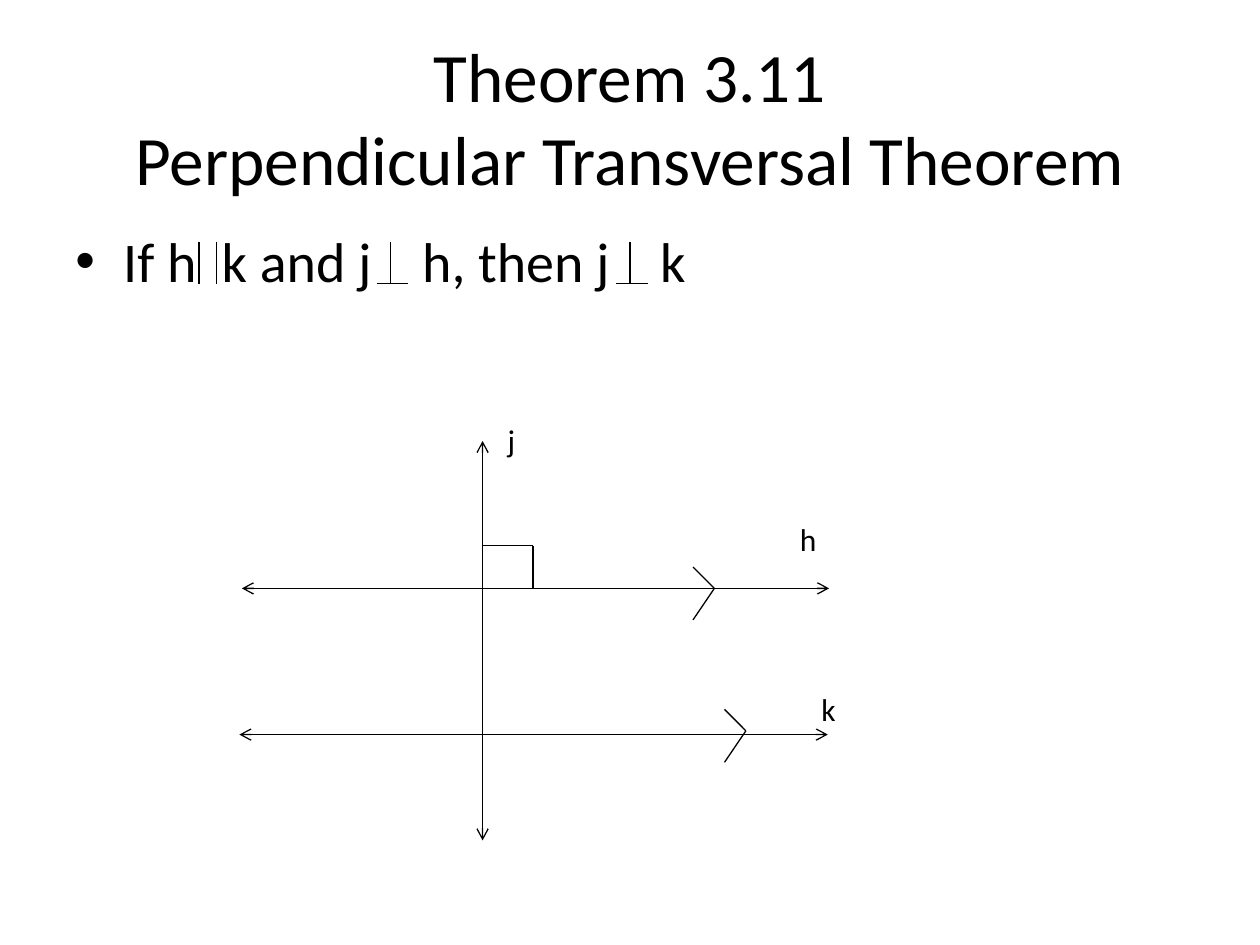
from lxml.etree import SubElement
from pptx import Presentation
from pptx.dml.color import RGBColor
from pptx.enum.shapes import MSO_CONNECTOR
from pptx.enum.text import MSO_ANCHOR, MSO_AUTO_SIZE, PP_ALIGN
from pptx.oxml.ns import qn
from pptx.util import Inches, Pt

COLORS = {"ink": "000000", "paper": "FFFFFF"}
FONT = "Calibri"
TITLE = "Theorem 3.11\vPerpendicular Transversal Theorem"
STATEMENT = "If h  k and j    h, then j    k"

SYMBOL_TOP, SYMBOL_BASE = 1.92, 2.25
PARALLEL_BARS = [1.58, 1.72]
PERPENDICULAR_STEMS = [3.1, 5]
J_X, H_Y, K_Y = 3.83, 4.67, 5.83
GEOMETRY_LINES = [
    (J_X, 3.5, J_X, 6.67),
    (1.92, H_Y, 6.58, H_Y),
    (1.9, K_Y, 6.57, K_Y),
]
RIGHT_ANGLE = [(J_X, 4.33), (4.23, 4.33), (4.23, H_Y)]
PARALLEL_MARK_TIPS = [(5.67, H_Y), (5.92, 5.8)]
LINE_LABELS = [("h", 6.25, 4.08), ("j", 3.93, 3.29), ("k", 6.42, 5.43)]


def style_text(frame, size):
    for para in frame.paragraphs:
        for span in para.runs:
            span.font.name = FONT
            span.font.size = Pt(size)
            span.font.color.rgb = RGBColor.from_string(COLORS["ink"])


def add_text(page, text, left, top, width, height, size):
    box = page.shapes.add_textbox(*map(Inches, (left, top, width, height)))
    frame = box.text_frame
    frame.word_wrap = True
    frame.text = text
    style_text(frame, size)
    return frame


def add_line(page, x1, y1, x2, y2, arrows=False):
    line = page.shapes.add_connector(
        MSO_CONNECTOR.STRAIGHT, *map(Inches, (x1, y1, x2, y2)))
    line.line.color.rgb = RGBColor.from_string(COLORS["ink"])
    line.line.width = Pt(0.75)
    if arrows:
        outline = line.line._get_or_add_ln()
        for end in ("a:headEnd", "a:tailEnd"):
            SubElement(outline, qn(end), type="arrow")
    SubElement(line._element.spPr, qn("a:effectLst"))


def add_title(page):
    title = page.shapes.title
    title.left, title.top, title.width, title.height = map(
        Inches, (0.5, 0.3, 9, 1.25))
    frame = title.text_frame
    frame.text = TITLE
    frame.vertical_anchor = MSO_ANCHOR.MIDDLE
    frame.paragraphs[0].alignment = PP_ALIGN.CENTER
    style_text(frame, 39.6)


def add_statement(page):
    para = add_text(page, STATEMENT, 0.5, 1.75, 9, 4.95, 32).paragraphs[0]
    para.space_before = Pt(6.4)
    props = para._p.get_or_add_pPr()
    props.set("marL", str(Inches(0.38)))
    props.set("indent", str(-Inches(0.38)))
    SubElement(props, qn("a:buFont"), typeface="Arial")
    SubElement(props, qn("a:buChar"), char="•")


def add_symbols(page):
    for x in PARALLEL_BARS:
        add_line(page, x, SYMBOL_TOP, x, SYMBOL_BASE)
    for x in PERPENDICULAR_STEMS:
        add_line(page, x - 0.11, SYMBOL_BASE, x + 0.14, SYMBOL_BASE)
        add_line(page, x, SYMBOL_TOP, x, SYMBOL_BASE)


def add_diagram(page):
    for ends in GEOMETRY_LINES:
        add_line(page, *ends, arrows=True)
    for start, end in zip(RIGHT_ANGLE, RIGHT_ANGLE[1:]):
        add_line(page, *start, *end)
    for x, y in PARALLEL_MARK_TIPS:
        for rise in (-0.17, 0.25):
            add_line(page, x, y, x - 0.17, y + rise)
    for name, left, top in LINE_LABELS:
        frame = add_text(page, name, left, top, 0.33, 0.42, 18)
        frame.auto_size = MSO_AUTO_SIZE.SHAPE_TO_FIT_TEXT


def main():
    """Build the Perpendicular Transversal Theorem slide."""
    deck = Presentation()
    deck.slide_width, deck.slide_height = Inches(10), Inches(7.5)
    page = deck.slides.add_slide(deck.slide_layouts[5])
    page.background.fill.solid()
    page.background.fill.fore_color.rgb = RGBColor.from_string(COLORS["paper"])
    add_title(page)
    add_statement(page)
    add_symbols(page)
    add_diagram(page)
    deck.save("out.pptx")


if __name__ == "__main__":
    main()
